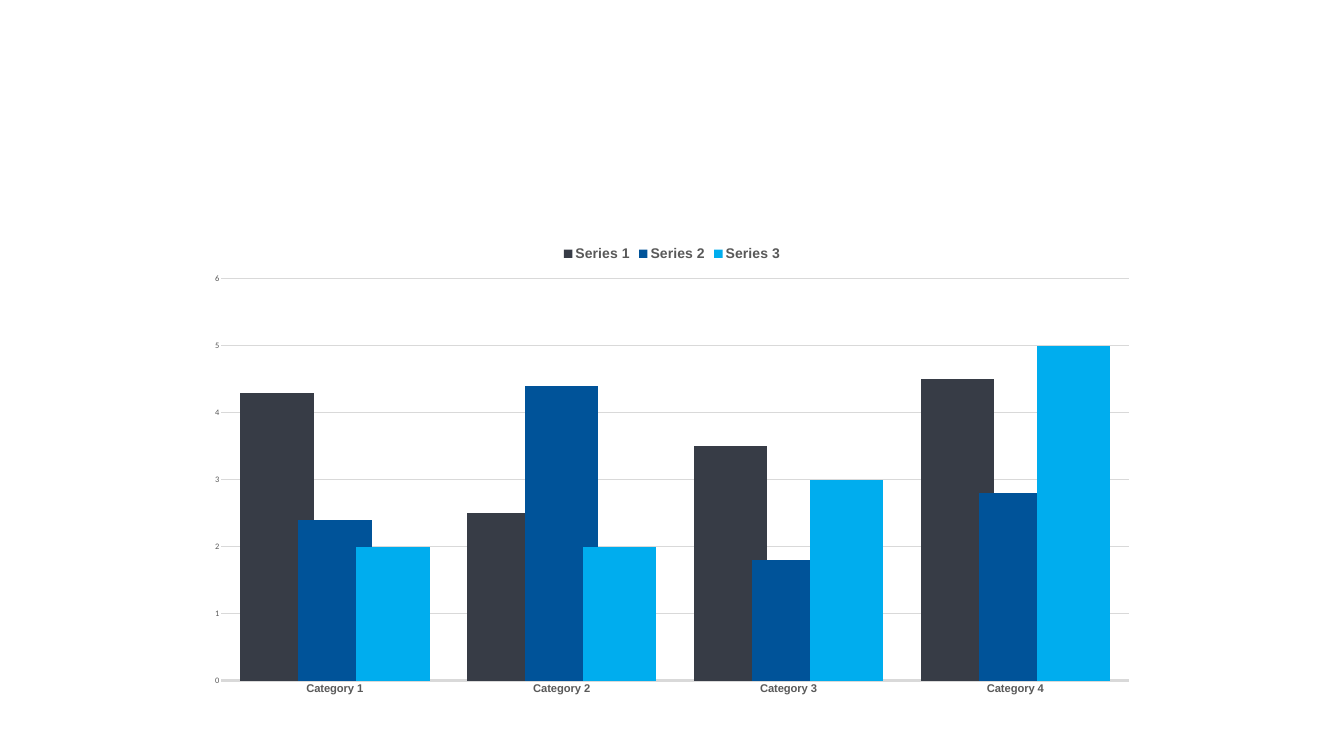
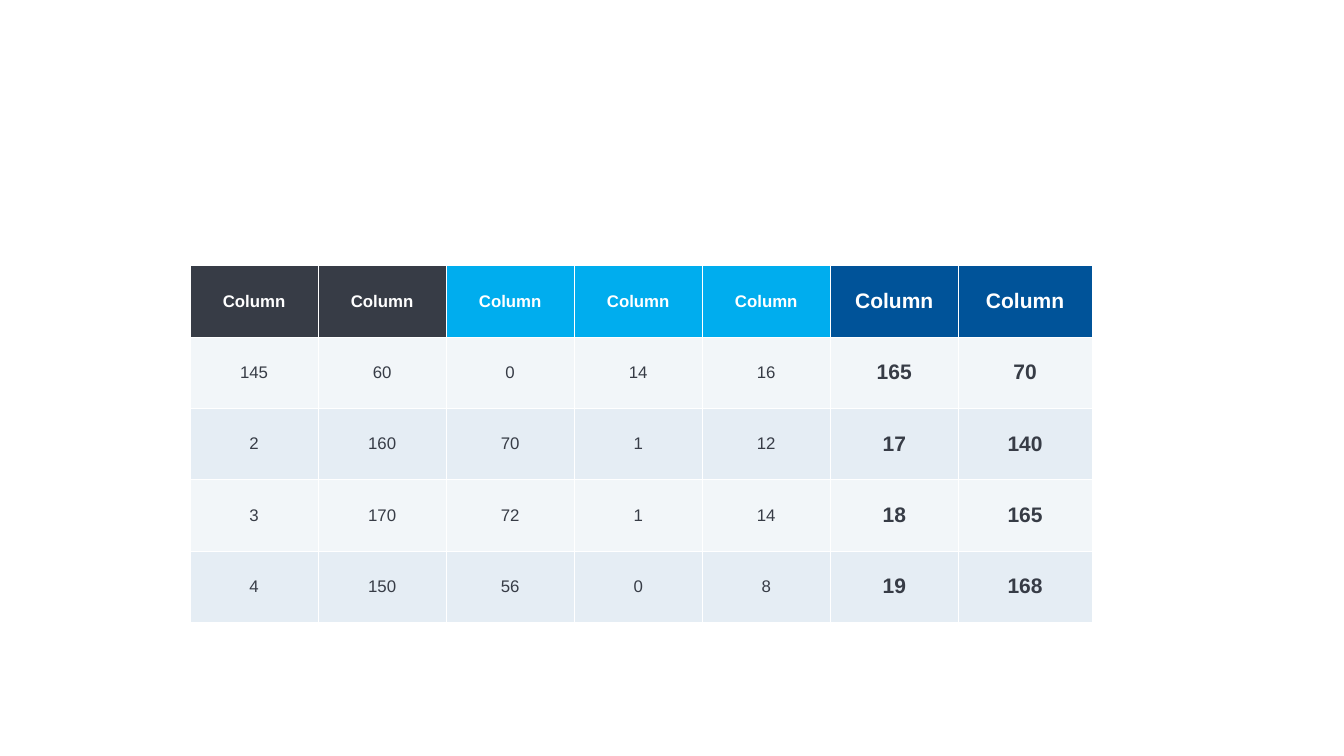
"""Build a clustered column chart slide and a data table slide."""
from dataclasses import dataclass

from lxml import etree
from pptx import Presentation
from pptx.chart.data import CategoryChartData
from pptx.dml.color import RGBColor
from pptx.enum.chart import XL_CHART_TYPE, XL_LEGEND_POSITION, XL_TICK_MARK
from pptx.enum.text import MSO_ANCHOR, PP_ALIGN
from pptx.oxml.ns import qn
from pptx.util import Inches, Pt

COLUMNS = XL_CHART_TYPE.COLUMN_CLUSTERED
TOP = XL_LEGEND_POSITION.TOP
NO_TICK = XL_TICK_MARK.NONE
MIDDLE = MSO_ANCHOR.MIDDLE
CENTER = PP_ALIGN.CENTER


@dataclass(frozen=True)
class Theme:
    dark: str = "373C46"
    blue: str = "005399"
    sky: str = "00ADEE"
    white: str = "FFFFFF"
    black: str = "000000"
    gray: str = "595959"
    rule: str = "D9D9D9"
    font: str = "Arial"
    chart_font: str = "Calibri"
    chart_size: int = 10
    value_size: int = 12
    category_size: int = 16
    legend_size: int = 20
    cell_size: int = 24
    total_size: int = 30


T = Theme()


def style_font(font, name, size, color, bold=False):
    font.name, font.size, font.bold = name, Pt(size), bold
    font.color.rgb = RGBColor.from_string(color)


def add_borders(cell, color, width):
    tcPr = cell._tc.get_or_add_tcPr()
    for side in ("lnL", "lnR", "lnT", "lnB"):
        ln = etree.SubElement(tcPr, qn(f"a:{side}"), w=str(Pt(width)))
        fill = etree.SubElement(ln, qn("a:solidFill"))
        etree.SubElement(fill, qn("a:srgbClr"), val=color)


prs = Presentation()
prs.slide_width, prs.slide_height = Inches(26.66), Inches(15)
blank = prs.slide_layouts[6]

s = prs.slides.add_slide(blank)
data = CategoryChartData()
data.categories = [f"Category {n}" for n in range(1, 5)]
series = [
    ("Series 1", (4.3, 2.5, 3.5, 4.5), T.dark),
    ("Series 2", (2.4, 4.4, 1.8, 2.8), T.blue),
    ("Series 3", (2, 2, 3, 5), T.sky),
]
for name, values, _ in series:
    data.add_series(name, values)
chart = s.shapes.add_chart(
    COLUMNS, Inches(3.89), Inches(4.75), Inches(18.88), Inches(9.22), data
).chart
style_font(chart.font, T.chart_font, T.chart_size, T.black)
chart.has_title = False
chart.has_legend = True
chart.legend.position = TOP
chart.legend.include_in_layout = False
style_font(chart.legend.font, T.font, T.legend_size, T.gray, True)

plot = chart.plots[0]
plot.vary_by_categories = False
plot.gap_width, plot.overlap = 51, 21
for ser, (_, _, color) in zip(plot.series, series):
    ser.invert_if_negative = False
    ser.format.fill.solid()
    ser.format.fill.fore_color.rgb = RGBColor.from_string(color)

cat, val = chart.category_axis, chart.value_axis
for axis in (cat, val):
    axis.major_tick_mark = axis.minor_tick_mark = NO_TICK
style_font(cat.tick_labels.font, T.font, T.category_size, T.gray, True)
style_font(val.tick_labels.font, T.chart_font, T.value_size, T.gray)
val.minimum_scale, val.maximum_scale, val.major_unit = 0, 6, 1
val.format.line.fill.background()
val.has_major_gridlines = True
for line, width in ((cat.format.line, 4.5), (val.major_gridlines.format.line, 0.75)):
    line.color.rgb = RGBColor.from_string(T.rule)
    line.width = Pt(width)

s = prs.slides.add_slide(blank)
rows = [
    ["Column"] * 7,
    [145, 60, 0, 14, 16, 165, 70],
    [2, 160, 70, 1, 12, 17, 140],
    [3, 170, 72, 1, 14, 18, 165],
    [4, 150, 56, 0, 8, 19, 168],
]
head_fills = [T.dark] * 2 + [T.sky] * 3 + [T.blue] * 2
first_total = 5
table = s.shapes.add_table(
    len(rows), len(head_fills), Inches(3.77), Inches(5.27), Inches(17.9), Inches(7.08)
).table
table.first_row = table.horz_banding = False
for col in table.columns:
    col.width = Inches(2.54)
table.columns[len(head_fills) - 1].width = Inches(2.65)

for i, row in enumerate(rows):
    is_head = i == 0
    for j, value in enumerate(row):
        is_total = j >= first_total
        cell = table.cell(i, j)
        add_borders(cell, T.white, 1)
        cell.fill.solid()
        cell.fill.fore_color.rgb = RGBColor.from_string(head_fills[j] if is_head else T.blue)
        if not is_head:
            clr = cell._tc.tcPr.find(f"{qn('a:solidFill')}/{qn('a:srgbClr')}")
            etree.SubElement(clr, qn("a:alpha"), val="5000" if i % 2 else "10000")
        cell.vertical_anchor = MIDDLE
        cell.margin_left = cell.margin_right = Inches(0.09 if is_head else 0.05)
        cell.margin_top = cell.margin_bottom = Inches(0.04 if is_head else 0.05)
        p = cell.text_frame.paragraphs[0]
        p.text = str(value)
        p.alignment = CENTER
        style_font(
            p.runs[0].font,
            T.font,
            T.total_size if is_total else T.cell_size,
            T.white if is_head else T.dark,
            is_head or is_total,
        )

prs.save("out.pptx")
